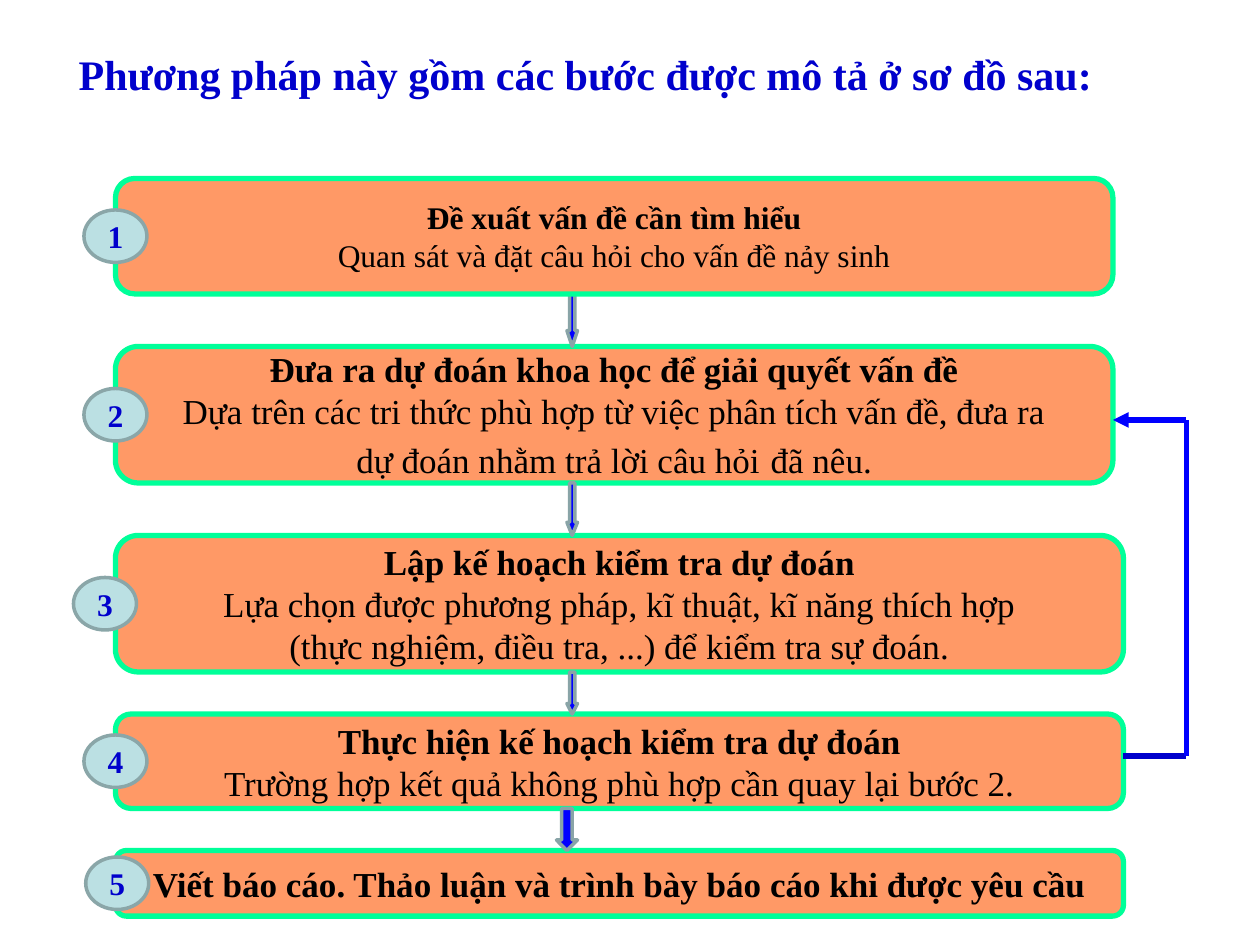
from lxml import etree
from pptx import Presentation
from pptx.dml.color import RGBColor
from pptx.enum import shapes, text
from pptx.oxml import ns
from pptx.util import Pt

FONT = "Times New Roman"
BLACK, NAVY, BLUE = "000000", "0000CC", "0000FF"
TITLE = "Phương pháp này gồm các bước được mô tả ở sơ đồ sau:"

BOX_LEFT = 66
# top, width, height, badge left, lines; a line is a list of (text, size, bold)
STEPS = [
    (102, 570, 66, 48, [
        [("Đề xuất vấn đề cần tìm hiểu", 18, True)],
        [("Quan sát và đặt câu hỏi cho vấn đề nảy sinh", 18, False)]]),
    (198, 570, 78, 48, [
        [("Đưa ra dự đoán khoa học để giải quyết vấn đề", 20, True)],
        [("Dựa trên các tri thức phù hợp từ việc phân tích vấn đề, đưa ra", 20, False)],
        [("dự đoán nhằm trả lời câu hỏi", 20, False), (" ", 24, False),
         ("đã nêu.", 20, False)]]),
    (306, 576, 78, 42, [
        [("Lập kế hoạch kiểm tra dự đoán", 20, True)],
        [("Lựa chọn được phương pháp, kĩ thuật, kĩ năng thích hợp", 20, False)],
        [("(thực nghiệm, điều tra, ...) để kiểm tra sự đoán.", 20, False)]]),
    (408, 576, 54, 48, [
        [("Thực hiện kế hoạch kiểm tra dự đoán", 20, True)],
        [("Trường hợp kết quả không phù hợp cần quay lại bước 2.", 20, False)]]),
    (486, 576, 37.5, 49, [
        [("Viết báo cáo. Thảo luận và trình bày báo cáo khi được yêu cầu", 20, True)]]),
]
BADGE_WIDTH, BADGE_HEIGHT = 36, 30

# left, top, bottom, width of the arrow after each step but the last
ARROWS = [(324, 162, 198, 6), (324, 276, 306, 6), (324, 384, 408, 6), (318, 462, 486, 12)]

# way back from step 4 to step 2
RETURN_PATH = [(642, 432), (678, 432), (678, 240), (636, 240)]
RETURN_COLORS = [NAVY, BLUE, BLUE]


def rgb(color):
    return RGBColor.from_string(color)


def add_run(paragraph, words, size, bold, color):
    run = paragraph.add_run()
    run.text = words
    run.font.name = FONT
    run.font.size = Pt(size)
    run.font.bold = bold
    run.font.color.rgb = rgb(color)


def add_shape(slide, preset, left, top, width, height, fill, line, weight):
    shape = slide.shapes.add_shape(preset, Pt(left), Pt(top), Pt(width), Pt(height))
    shape.shadow.inherit = False
    shape.fill.solid()
    shape.fill.fore_color.rgb = rgb(fill)
    shape.line.color.rgb = rgb(line)
    shape.line.width = Pt(weight)
    return shape


def write_lines(shape, lines, color, wrap):
    frame = shape.text_frame
    frame.word_wrap = wrap
    frame.vertical_anchor = text.MSO_ANCHOR.MIDDLE
    for index, line in enumerate(lines):
        paragraph = frame.add_paragraph() if index else frame.paragraphs[0]
        paragraph.alignment = text.PP_ALIGN.CENTER
        for words, size, bold in line:
            add_run(paragraph, words, size, bold, color)


def add_title(slide):
    title = slide.shapes.add_textbox(Pt(24), Pt(24), Pt(642), Pt(42))
    frame = title.text_frame
    frame.word_wrap = True
    frame.margin_left = Pt(21)
    add_run(frame.paragraphs[0], TITLE, 24, True, NAVY)


def add_step(slide, number):
    top, width, height, badge_left, lines = STEPS[number - 1]
    box = add_shape(slide, shapes.MSO_SHAPE.FLOWCHART_ALTERNATE_PROCESS,
                    BOX_LEFT, top, width, height, "FF9966", "00FF99", 3)
    write_lines(box, lines, BLACK, False)
    badge_top = top + (height - BADGE_HEIGHT) / 2
    badge = add_shape(slide, shapes.MSO_SHAPE.OVAL, badge_left, badge_top,
                      BADGE_WIDTH, BADGE_HEIGHT, "BBE0E3", "8AA6A8", 2)
    write_lines(badge, [[(str(number), 18, True)]], NAVY, True)


def add_arrow(slide, left, top, bottom, width):
    """Add a down arrow whose head takes a quarter of its length."""
    length = bottom - top
    arrow = add_shape(slide, shapes.MSO_SHAPE.DOWN_ARROW, left, top, width, length,
                      BLUE, "89A4A7", 2)
    arrow.adjustments[0] = 0.5
    arrow.adjustments[1] = length / width / 4


def add_return_path(slide):
    for start, end, color in zip(RETURN_PATH, RETURN_PATH[1:], RETURN_COLORS):
        segment = slide.shapes.add_connector(
            shapes.MSO_CONNECTOR.STRAIGHT, *map(Pt, start + end))
        segment.line.color.rgb = rgb(color)
        segment.line.width = Pt(3)
        properties = segment.element.spPr
        if end == RETURN_PATH[-1]:
            etree.SubElement(segment.line._get_or_add_ln(), ns.qn("a:tailEnd"),
                             type="triangle")
        etree.SubElement(properties, ns.qn("a:effectLst"))


def main():
    deck = Presentation()
    deck.slide_width, deck.slide_height = Pt(720), Pt(540)
    slide = deck.slides.add_slide(deck.slide_layouts[6])
    add_title(slide)
    for number in range(2, len(STEPS) + 1):
        add_step(slide, number)
    for arrow in ARROWS:
        add_arrow(slide, *arrow)
    add_return_path(slide)
    add_step(slide, 1)  # covers the start of the first arrow
    deck.save("out.pptx")


if __name__ == "__main__":
    main()
